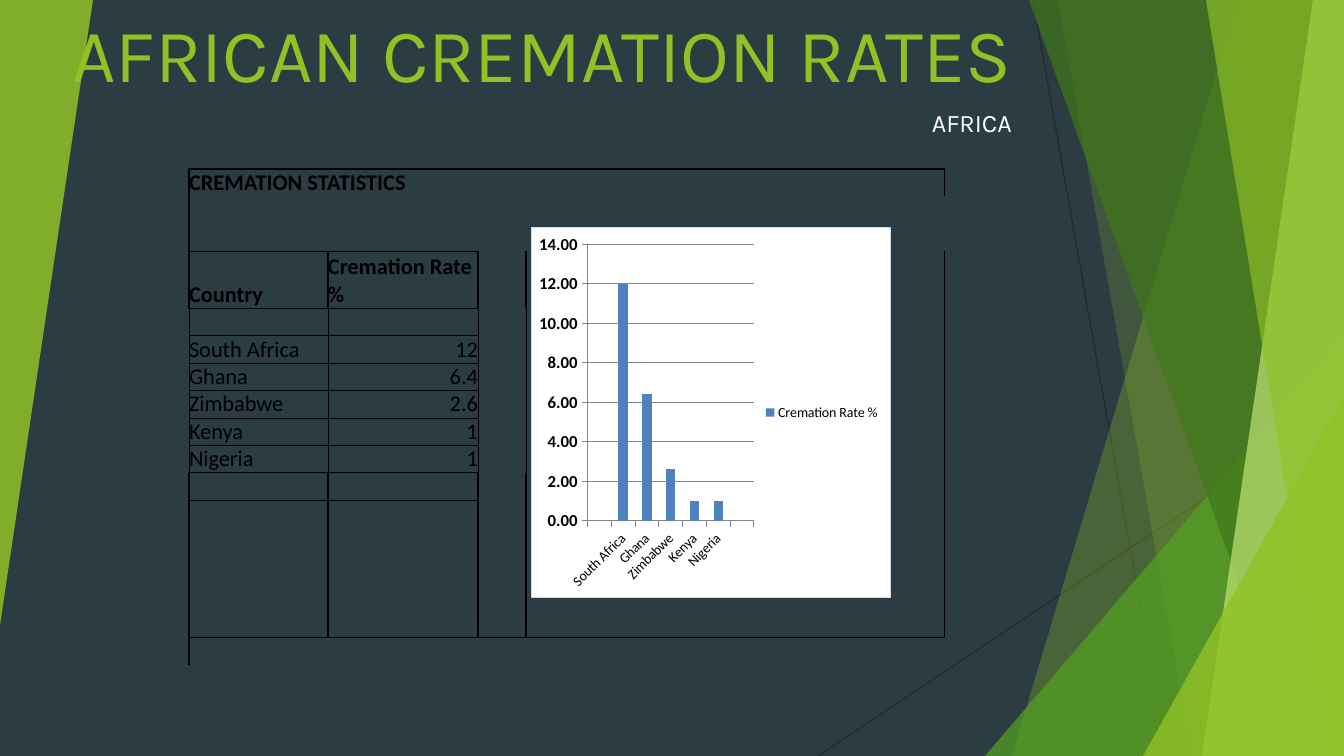
"""Build the African cremation rates slide with its table and column chart."""
from lxml import etree
from pptx import Presentation
from pptx.chart import data as chart_data
from pptx.dml import color
from pptx.enum import chart as ch, shapes as sh, text as tx
from pptx.oxml import parse_xml, ns
from pptx import util as u

TITLE = "AFRICAN CREMATION RATES"
REGION = "AFRICA"
TABLE_HEADING = "CREMATION STATISTICS"
COUNTRY_HEAD, RATE_HEAD = "Country", "Cremation Rate %"
RATES = [("South Africa", 12), ("Ghana", 6.4), ("Zimbabwe", 2.6), ("Kenya", 1), ("Nigeria", 1)]

COLORS = {"background": "2C3C43", "lime": "90C226", "green": "54A021", "forest": "3F7819",
          "pale": "C0E474", "ray": "262626", "white": "FFFFFF", "black": "000000",
          "column": "4F81BD", "axis": "878787", "frame": "D9D9D9"}
WIDTH, HEIGHT = 1344, 756
PX = 12192000 / WIDTH

RAYS = [(1033, 0, 1167, 756), (1344, 406, 818, 756)]
FACETS = [("lime", 30, (1238, 1012)), ("lime", 20, (1058, 1192)),
          ("green", 72, (985, 336, 359, 420, 0)), ("forest", 70, (1029, 1301)),
          ("pale", 70, (1313, 1202)), ("lime", 65, (1206, 1329)),
          ("lime", 80, (1143, 396, 201, 360, 0)), ("lime", 85, (0, 0, 93, 625, 180))]
TITLE_BOX = (-18, -10, 1040, 113)
REGION_BOX = (166, 102, 856, 654)
TABLE_COLUMNS = [139, 150, 48, 106, 73, 73, 167]
HEAD_ROW, SPACER_ROW, LAST_BOX_ROW, BOTTOM_ROW, ROW_COUNT = 3, 4, 9, 15, 17
ROW_HEIGHTS = [57 if row == HEAD_ROW else 27 for row in range(ROW_COUNT)]
TABLE_BOX = (189, 169, sum(TABLE_COLUMNS), sum(ROW_HEIGHTS))
CHART_BOX = (531, 227, 360, 371)
PLOT_BOX = (587, 244, 167, 277)


def emu(*lengths):
    return [round(length * PX) for length in lengths]


def rgb(name):
    return color.RGBColor.from_string(COLORS[name])


def style_font(font, size, name, ink, bold=False):
    font.size, font.name, font.bold = u.Pt(size), name, bold
    font.color.rgb = rgb(ink)


def style_line(line, ink, points=0.75):
    line.color.rgb = rgb(ink)
    line.width = u.Pt(points)


def add_backdrop(slide):
    for ray in RAYS:
        line = slide.shapes.add_connector(sh.MSO_CONNECTOR.STRAIGHT, *emu(*ray))
        style_line(line.line, "ray")
        etree.SubElement(line._element.spPr, ns.qn("a:effectLst"))
    for ink, opacity, outline in FACETS:
        if len(outline) == 2:
            top, bottom = outline
            builder = slide.shapes.build_freeform(top, 0, scale=PX)
            builder.add_line_segments([(WIDTH, 0), (WIDTH, HEIGHT), (bottom, HEIGHT)])
            facet = builder.convert_to_shape()
        else:
            *box, turn = outline
            facet = slide.shapes.add_shape(sh.MSO_SHAPE.ISOSCELES_TRIANGLE, *emu(*box))
            facet.adjustments[0] = 1
            facet.rotation = turn
        facet.shadow.inherit = False
        facet.line.fill.background()
        facet.fill.solid()
        facet.fill.fore_color.rgb = rgb(ink)
        tint = facet._element.spPr.find(".//" + ns.qn("a:srgbClr"))
        etree.SubElement(tint, ns.qn("a:alpha"), val=str(opacity * 1000))


def fill_heading(slide, holder, words, box, size, ink, anchor):
    holder.left, holder.top, holder.width, holder.height = emu(*box)
    frame = holder.text_frame
    frame.text = words
    frame.word_wrap = True
    frame.auto_size = tx.MSO_AUTO_SIZE.NONE
    frame.vertical_anchor = anchor
    paragraph = frame.paragraphs[0]
    paragraph.alignment = tx.PP_ALIGN.RIGHT
    style_font(paragraph.runs[0].font, size, "Karla", ink)
    slide.shapes._spTree.append(holder._element)
    return paragraph


def cell_borders(row, column):
    """Return the width in points of each drawn side of a cell."""
    sides = {}
    last = len(TABLE_COLUMNS) - 1
    boxed = HEAD_ROW <= row <= BOTTOM_ROW
    points = 0.5 if SPACER_ROW <= row <= LAST_BOX_ROW else 1
    if column == 0 or (boxed and column <= 2):
        sides["L"] = points
    if (boxed and column < 2) or (column == last and (row == 0 or boxed)):
        sides["R"] = 1 if column == last else points
    if row in (0, BOTTOM_ROW + 1) or (column < 2 and HEAD_ROW <= row <= LAST_BOX_ROW + 1):
        sides["T"] = 0.5 if SPACER_ROW < row <= LAST_BOX_ROW + 1 else 1
    if row == BOTTOM_ROW or (column < 2 and HEAD_ROW - 1 <= row <= LAST_BOX_ROW):
        sides["B"] = 1 if row in (HEAD_ROW - 1, BOTTOM_ROW) or (row, column) == (HEAD_ROW, 0) else 0.5
    return sides


def add_statistics(slide):
    table = slide.shapes.add_table(ROW_COUNT, len(TABLE_COLUMNS), *emu(*TABLE_BOX)).table
    table.first_row = table.horz_banding = False
    style = table._tbl.tblPr.find(ns.qn("a:tableStyleId"))
    style.text = "{2D5ABB26-0587-4C30-8999-92F81FD0307C}"
    for column, width in zip(table.columns, emu(*TABLE_COLUMNS)):
        column.width = width
    for row, height in zip(table.rows, emu(*ROW_HEIGHTS)):
        row.height = height
    words = {(0, 0): TABLE_HEADING, (HEAD_ROW, 0): COUNTRY_HEAD, (HEAD_ROW, 1): RATE_HEAD}
    for row, (country, rate) in enumerate(RATES, SPACER_ROW + 1):
        words[row, 0], words[row, 1] = country, str(rate)
    for row in range(ROW_COUNT):
        for column in range(len(TABLE_COLUMNS)):
            cell = table.cell(row, column)
            cell.margin_left = cell.margin_right = cell.margin_top = cell.margin_bottom = 0
            cell.vertical_anchor = tx.MSO_ANCHOR.BOTTOM
            paragraph = cell.text_frame.paragraphs[0]
            if (row, column) in words:
                paragraph.text = words[row, column]
                style_font(paragraph.runs[0].font, 16, "Calibri", "black", row <= HEAD_ROW)
                if column == 1 and row > HEAD_ROW:
                    paragraph.alignment = tx.PP_ALIGN.RIGHT
            else:
                paragraph._p.get_or_add_endParaRPr().set("sz", "1600")
            properties = cell._tc.get_or_add_tcPr()
            for side, points in cell_borders(row, column).items():
                properties.append(parse_xml(
                    f'<a:ln{side} {ns.nsdecls("a")} w="{round(points * 12700)}"><a:solidFill>'
                    f'<a:srgbClr val="{COLORS["black"]}"/></a:solidFill></a:ln{side}>'))
            cell.fill.background()
    table.cell(0, 0).merge(table.cell(0, 1))


def add_rate_chart(slide):
    rates = chart_data.CategoryChartData(number_format="General")
    rates.categories = ["", *(country for country, _ in RATES), ""]
    rates.add_series(RATE_HEAD, [None, *(rate for _, rate in RATES), None])
    chart = slide.shapes.add_chart(ch.XL_CHART_TYPE.COLUMN_CLUSTERED, *emu(*CHART_BOX), rates).chart
    style_font(chart.font, 10, "Calibri", "black")
    chart.has_title = False
    chart.has_legend = True
    chart.legend.position = ch.XL_LEGEND_POSITION.RIGHT
    chart.legend.include_in_layout = False
    style_font(chart.legend.font, 10, "Calibri", "black")
    plot = chart.plots[0]
    plot.gap_width, plot.vary_by_categories = 150, False
    columns = plot.series[0].format.fill
    columns.solid()
    columns.fore_color.rgb = rgb("column")
    for axis, size, bold in ((chart.category_axis, 10, False), (chart.value_axis, 12, True)):
        style_font(axis.tick_labels.font, size, "Calibri", "black", bold)
        style_line(axis.format.line, "axis")
        axis.major_tick_mark = ch.XL_TICK_MARK.OUTSIDE
    labels = chart.category_axis._element.find(ns.qn("c:txPr")).find(ns.qn("a:bodyPr"))
    labels.set("rot", "-2700000")
    values = chart.value_axis
    values.minimum_scale, values.maximum_scale, values.major_unit = 0, 14, 2
    values.tick_labels.number_format = "#,##0.00"
    values.tick_labels.number_format_is_linked = False
    style_line(values.major_gridlines.format.line, "axis")

    left, top, width, height = CHART_BOX
    x, y, w, h = PLOT_BOX
    shares = {"x": (x - left) / width, "y": (y - top) / height, "w": w / width, "h": h / height}
    places = "".join(f'<c:{key} val="{share:.3f}"/>' for key, share in shares.items())
    area = chart._chartSpace.chart.plotArea
    for layout in area.findall(ns.qn("c:layout")):
        area.remove(layout)
    area.insert(0, parse_xml(
        f'<c:layout {ns.nsdecls("c")}><c:manualLayout><c:layoutTarget val="inner"/>'
        f'<c:xMode val="edge"/><c:yMode val="edge"/>{places}</c:manualLayout></c:layout>'))
    chart._chartSpace.chart.addnext(parse_xml(
        f'<c:spPr {ns.nsdecls("c", "a")}><a:solidFill><a:srgbClr val="{COLORS["white"]}"/></a:solidFill>'
        f'<a:ln w="9525"><a:solidFill><a:srgbClr val="{COLORS["frame"]}"/></a:solidFill></a:ln></c:spPr>'))


def main():
    deck = Presentation()
    deck.slide_width, deck.slide_height = emu(WIDTH, HEIGHT)
    slide = deck.slides.add_slide(deck.slide_layouts[0])
    slide.background.fill.solid()
    slide.background.fill.fore_color.rgb = rgb("background")
    title, region = slide.placeholders
    add_backdrop(slide)
    fill_heading(slide, title, TITLE, TITLE_BOX, 54, "lime", tx.MSO_ANCHOR.BOTTOM)
    subtitle = fill_heading(slide, region, REGION, REGION_BOX, 18, "white", tx.MSO_ANCHOR.TOP)
    subtitle.space_before = u.Pt(10)
    add_statistics(slide)
    add_rate_chart(slide)
    deck.save("out.pptx")


if __name__ == "__main__":
    main()
